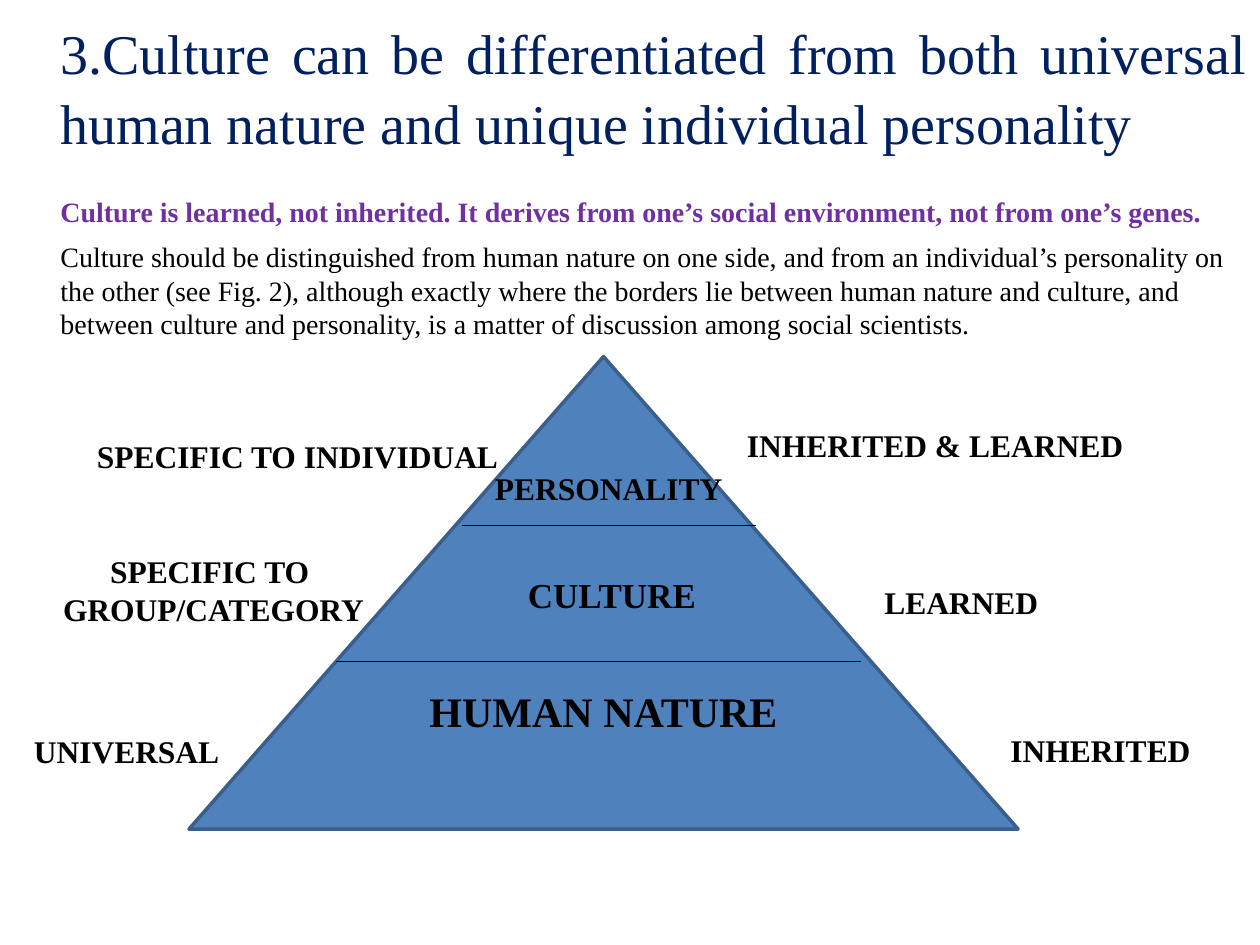
import dataclasses
import pptx
import pptx.util
import pptx.dml.color
import pptx.enum.shapes
import pptx.enum.text
import pptx.oxml.ns
import lxml.etree

Inches = pptx.util.Inches
Pt = pptx.util.Pt
Align = pptx.enum.text.PP_ALIGN
Shape = pptx.enum.shapes.MSO_SHAPE
Link = pptx.enum.shapes.MSO_CONNECTOR


@dataclasses.dataclass
class Theme:
    font: str = "Times New Roman"
    ink: str = "000000"
    navy: str = "002060"
    violet: str = "7030A0"
    blue: str = "4F81BD"
    edge: str = "3A5F8C"
    head: int = 32
    base: int = 24
    mid: int = 20
    label: int = 18
    body: int = 16


class Deck:
    """Hold the theme and the current slide, and draw each kind of element."""

    def __init__(self, theme):
        self.theme = theme
        self.show = pptx.Presentation()
        self.show.slide_width, self.show.slide_height = Inches(10), Inches(7.5)
        self.slide = self.show.slides.add_slide(self.show.slide_layouts[1])
        self.shapes = self.slide.shapes

    def color(self, code):
        return pptx.dml.color.RGBColor.from_string(code)

    def run(self, para, text, size, code, bold=True):
        run = para.add_run()
        run.text = text
        font = run.font
        font.name, font.size, font.bold = self.theme.font, Pt(size), bold
        font.color.rgb = self.color(code)

    def body(self, box, items):
        title = self.shapes.title
        title.element.getparent().remove(title.element)
        holder = self.slide.placeholders[1]
        holder.left, holder.top, holder.width, holder.height = map(Inches, box)
        frame = holder.text_frame
        frame.margin_top = Inches(0.12)
        frame.auto_size = pptx.enum.text.MSO_AUTO_SIZE.NONE
        for i, (text, size, code, bold, align, gap, pitch) in enumerate(items):
            para = frame.add_paragraph() if i else frame.paragraphs[0]
            props = para._p.get_or_add_pPr()
            props.set("marL", str(Inches(0.38)))
            props.set("indent", "0")
            lxml.etree.SubElement(props, pptx.oxml.ns.qn("a:buNone"))
            para.alignment, para.space_before = align, Pt(gap)
            para.line_spacing = pitch
            self.run(para, text, size, code, bold)

    def peak(self, box, text):
        shape = self.shapes.add_shape(Shape.ISOSCELES_TRIANGLE, *map(Inches, box))
        shape.adjustments[0] = 0.5
        shape.shadow.inherit = False
        shape.fill.solid()
        shape.fill.fore_color.rgb = self.color(self.theme.blue)
        shape.line.color.rgb = self.color(self.theme.edge)
        shape.line.width = Pt(2)
        frame = shape.text_frame
        frame.vertical_anchor = pptx.enum.text.MSO_ANCHOR.MIDDLE
        para = frame.paragraphs[0]
        para.alignment = Align.CENTER
        self.run(para, text, self.theme.base, self.theme.ink)

    def rule(self, left, right, y):
        line = self.shapes.add_connector(Link.STRAIGHT, *map(Inches, (left, y, right, y)))
        line.line.color.rgb = self.color(self.theme.ink)
        line.line.width = Pt(0.75)
        props = line._element.spPr
        lxml.etree.SubElement(props, pptx.oxml.ns.qn("a:effectLst"))

    def label(self, box, lines, size, align=Align.LEFT):
        frame = self.shapes.add_textbox(*map(Inches, box)).text_frame
        frame.word_wrap = False
        frame.auto_size = pptx.enum.text.MSO_AUTO_SIZE.SHAPE_TO_FIT_TEXT
        for i, text in enumerate(lines):
            para = frame.add_paragraph() if i else frame.paragraphs[0]
            para.alignment = align
            self.run(para, text, size, self.theme.ink)


def main():
    theme = Theme()
    deck = Deck(theme)
    deck.body((0, 0, 10, 7.5), [
        ("3.Culture can be differentiated from both universal human nature "
         "and unique individual personality",
         theme.head, theme.navy, False, Align.JUSTIFY, 0, 1.05),
        ("Culture is learned, not inherited. It derives from one’s social "
         "environment, not from one’s genes.",
         theme.body, theme.violet, True, Align.LEFT, 22, 1),
        ("Culture should be distinguished from human nature on one side, and "
         "from an individual’s personality on the other (see Fig. 2), although "
         "exactly where the borders lie between human nature and culture, and "
         "between culture and personality, is a matter of discussion among "
         "social scientists.",
         theme.body, theme.ink, False, Align.LEFT, 6.5, 1),
    ])
    deck.peak((1.5, 2.83, 6.58, 3.75), "HUMAN NATURE")
    deck.rule(3.67, 6, 4.17)
    deck.rule(2.67, 6.83, 5.25)
    deck.label((4.09, 4.5, 1.55, 0.44), ["CULTURE"], theme.mid)
    for left, top, width, text in [
        (3.83, 3.67, 2.03, "PERSONALITY"),
        (7.92, 5.75, 1.65, "INHERITED"),
        (6.92, 4.58, 1.44, "LEARNED"),
        (5.83, 3.33, 3.22, "INHERITED & LEARNED"),
        (0.67, 3.42, 3.42, "SPECIFIC TO INDIVIDUAL"),
        (0.17, 5.76, 1.69, "UNIVERSAL"),
    ]:
        deck.label((left, top, width, 0.4), [text], theme.label)
    deck.label((0.39, 4.33, 2.61, 0.71), ["SPECIFIC TO ", "GROUP/CATEGORY"],
               theme.label, Align.CENTER)
    deck.show.save("out.pptx")


if __name__ == "__main__":
    main()
